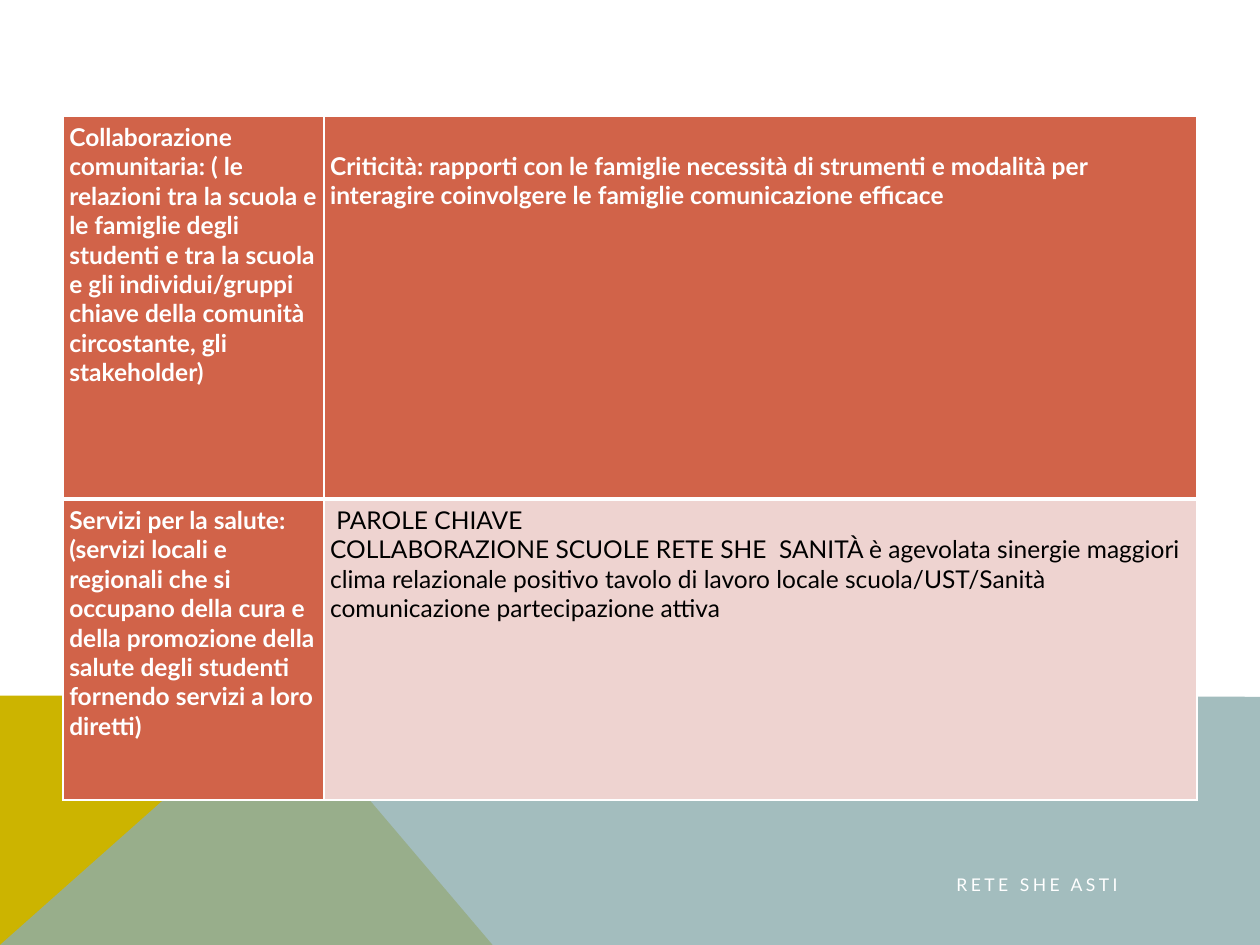
from lxml import etree
from pptx import Presentation
from pptx.dml.color import RGBColor
from pptx.enum.text import MSO_ANCHOR, PP_ALIGN
from pptx.oxml.ns import qn
from pptx.util import Inches, Pt

MIDDLE = MSO_ANCHOR.MIDDLE
RIGHT = PP_ALIGN.RIGHT
FONT = "Lato"
WHITE, BLACK, RUST, PINK = "FFFFFF", "000000", "D16349", "EED3D0"

# Each cell: paragraphs, fill, text colour, bold, top margin
ROWS = [
    [
        (["Collaborazione comunitaria: ( le relazioni tra la scuola e le famiglie "
          "degli studenti e tra la scuola e gli individui/gruppi chiave della "
          "comunità circostante, gli stakeholder)"], RUST, WHITE, True, 0.05),
        (["Criticità: rapporti con le famiglie necessità di strumenti e modalità per "
          "interagire coinvolgere le famiglie comunicazione efficace"],
         RUST, WHITE, True, 0.28),
    ],
    [
        (["Servizi per la salute: (servizi locali e regionali che si occupano della "
          "cura e della promozione della salute degli studenti fornendo servizi a "
          "loro diretti)"], RUST, WHITE, True, 0.05),
        ([" PAROLE CHIAVE",
          "COLLABORAZIONE SCUOLE RETE SHE  SANITÀ è agevolata sinergie maggiori clima "
          "relazionale positivo tavolo di lavoro locale scuola/UST/Sanità "
          "comunicazione partecipazione attiva"], PINK, BLACK, False, 0.05),
    ],
]
COLUMN_WIDTHS = [2.07, 6.93]
ROW_HEIGHTS = [3.04, 2.39]
FOOTER = "RETE SHE ASTI"

# Each band: points, fill, opacity in percent
BANDS = [
    ([(0, 7.5), (0, 5.52), (2.23, 5.52), (3.91, 7.5)], "CCB400", 100),
    ([(0, 7.5), (2.23, 5.52), (10, 5.53), (10, 7.5)], "8CADAE", 80),
]


def paint(fill, color):
    fill.solid()
    fill.fore_color.rgb = RGBColor.from_string(color)


def add_run(paragraph, text, size, color, bold=False):
    run = paragraph.add_run()
    run.text = text
    run.font.name = FONT
    run.font.size = Pt(size)
    run.font.bold = bold
    run.font.color.rgb = RGBColor.from_string(color)
    return run


def add_band(slide, points, color, opacity):
    corners = [(Inches(x), Inches(y)) for x, y in points]
    builder = slide.shapes.build_freeform(*corners[0], scale=1.0)
    builder.add_line_segments(corners[1:], close=True)
    band = builder.convert_to_shape()
    band.shadow.inherit = False
    band.line.fill.background()
    paint(band.fill, color)
    if opacity < 100:
        tint = band.fill._xPr.find(qn("a:solidFill"))[0]
        etree.SubElement(tint, qn("a:alpha"), val=str(opacity * 1000))


def add_borders(cell, widths):
    """Draw white borders; widths maps each side (L, R, T, B) to points."""
    properties = cell._tc.get_or_add_tcPr()
    for side, width in widths.items():
        line = etree.SubElement(properties, qn(f"a:ln{side}"), w=str(Pt(width)))
        solid = etree.SubElement(line, qn("a:solidFill"))
        etree.SubElement(solid, qn("a:srgbClr"), val=WHITE)


def fill_cell(cell, paragraphs, color, text_color, bold, top):
    cell.margin_left = cell.margin_right = cell.margin_bottom = Inches(0.05)
    cell.margin_top = Inches(top)
    paint(cell.fill, color)
    frame = cell.text_frame
    for i, text in enumerate(paragraphs):
        paragraph = frame.add_paragraph() if i else frame.paragraphs[0]
        add_run(paragraph, text, 14, text_color, bold)


def add_health_table(slide):
    table = slide.shapes.add_table(
        len(ROW_HEIGHTS), len(COLUMN_WIDTHS), Inches(0.5), Inches(0.92),
        Inches(sum(COLUMN_WIDTHS)), Inches(sum(ROW_HEIGHTS))).table
    for column, width in zip(table.columns, COLUMN_WIDTHS):
        column.width = Inches(width)
    for r, (row, height) in enumerate(zip(table.rows, ROW_HEIGHTS)):
        row.height = Inches(height)
        top, bottom = (1, 3) if r == 0 else (3, 1)
        for cell, content in zip(row.cells, ROWS[r]):
            add_borders(cell, {"L": 1, "R": 1, "T": top, "B": bottom})
            fill_cell(cell, *content)


def add_footer(slide):
    box = slide.shapes.add_textbox(Inches(3.85), Inches(6.87), Inches(5.17), Inches(0.3))
    frame = box.text_frame
    frame.word_wrap = True
    frame.vertical_anchor = MIDDLE
    frame.margin_right = Inches(0.15)
    frame.paragraphs[0].alignment = RIGHT
    run = add_run(frame.paragraphs[0], FOOTER, 10, WHITE)
    run.font._element.set("spc", "200")


def main():
    presentation = Presentation()
    presentation.slide_width = Inches(10)
    presentation.slide_height = Inches(7.5)
    slide = presentation.slides.add_slide(presentation.slide_layouts[6])
    paint(slide.background.fill, WHITE)
    for band in BANDS:
        add_band(slide, *band)
    add_health_table(slide)
    add_footer(slide)
    presentation.save("out.pptx")


if __name__ == "__main__":
    main()
